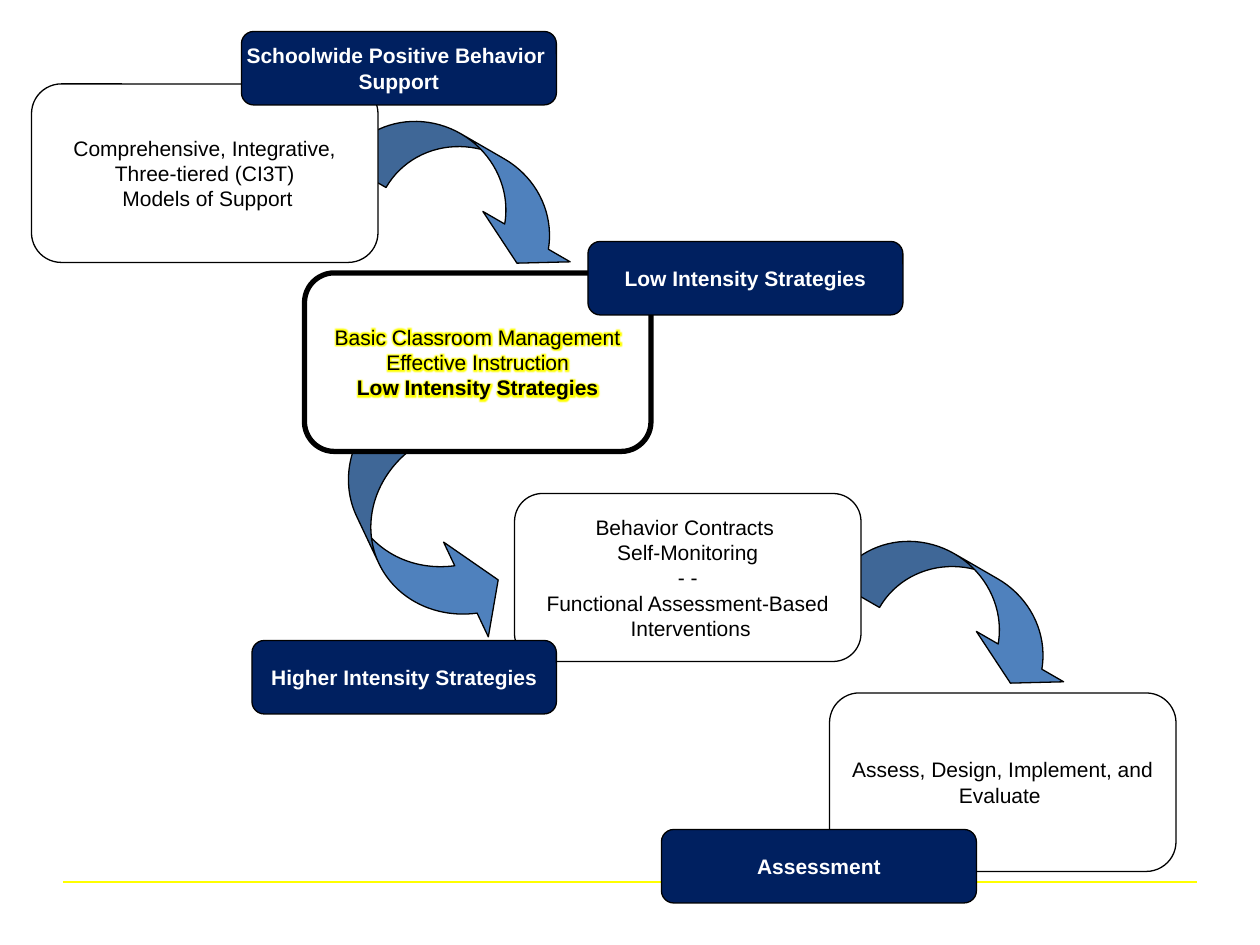
from lxml import etree
from pptx import Presentation
from pptx.dml.color import RGBColor
from pptx.enum.shapes import MSO_CONNECTOR, MSO_SHAPE
from pptx.enum.text import MSO_ANCHOR, PP_ALIGN
from pptx.oxml.ns import qn
from pptx.util import Inches, Pt

ROUND = MSO_SHAPE.ROUNDED_RECTANGLE
DOWN = MSO_SHAPE.CURVED_DOWN_ARROW
UP = MSO_SHAPE.CURVED_UP_ARROW
LINE = MSO_CONNECTOR.STRAIGHT
MIDDLE = MSO_ANCHOR.MIDDLE
CENTER = PP_ALIGN.CENTER

WHITE = RGBColor(255, 255, 255)
BLACK = RGBColor(0, 0, 0)
NAVY = RGBColor(0, 32, 96)
BLUE = RGBColor(79, 129, 189)
YELLOW = RGBColor(255, 255, 0)
THIN, THICK = 0.75, 3

deck = Presentation()
deck.slide_width = Inches(10)
deck.slide_height = Inches(7.5)
COL = deck.slide_width / 120
ROW = deck.slide_height / 90
slide = deck.slides.add_slide(deck.slide_layouts[6])


def add_form(kind, left, top, wide, high, fill, width=THIN):
    form = slide.shapes.add_shape(
        kind, int(left * COL), int(top * ROW), int(wide * COL), int(high * ROW))
    form.shadow.inherit = False
    form.fill.solid()
    form.fill.fore_color.rgb = fill
    form.line.color.rgb = BLACK
    form.line.width = Pt(width)
    return form


def add_box(left, top, wide, high, fill, text, width=THIN):
    box = add_form(ROUND, left, top, wide, high, fill, width)
    frame = box.text_frame
    frame.word_wrap = False
    frame.vertical_anchor = MIDDLE
    frame.text = text
    for para in frame.paragraphs:
        para.alignment = CENTER
        for run in para.runs:
            run.font.size = Pt(12)
            run.font.name = "Arial"
            run.font.bold = fill == NAVY
            run.font.color.rgb = WHITE if fill == NAVY else BLACK
    return box


rule = slide.shapes.add_connector(
    LINE, int(6 * COL), int(84 * ROW), int(114 * COL), int(84 * ROW))
rule.line.color.rgb = YELLOW
rule.line.width = Pt(THIN)
etree.SubElement(rule._element.spPr, qn("a:effectLst"))

arrows = [
    (DOWN, 33, 14, 24, 8, 30, (0.6, 1.2, 0.33)),
    (UP, 27.4, 45.7, 25, 9.6, 64.7, (0.52, 1.04, 0.33)),
    (DOWN, 80, 54, 24, 8, 30, (0.6, 1.2, 0.33)),
]
for kind, left, top, wide, high, turn, bends in arrows:
    arrow = add_form(kind, left, top, wide, high, BLUE)
    arrow.rotation = turn
    for spot, bend in enumerate(bends):
        arrow.adjustments[spot] = bend

panels = [
    (3, 8, 17, THIN,
     "Comprehensive, Integrative,\nThree-tiered (CI3T)\n Models of Support"),
    (79, 66, 17, THIN, "Assess, Design, Implement, and\nEvaluate "),
    (29, 26, 17, THICK,
     "Basic Classroom Management\nEffective Instruction\nLow Intensity Strategies"),
    (49, 47, 16, THIN,
     "Behavior Contracts \nSelf-Monitoring\n- -\n"
     "Functional Assessment-Based\n Interventions"),
]
for left, top, high, width, text in panels:
    panel = add_box(left, top, 33, high, WHITE, text, width)
    if width == THICK:
        focus = panel.text_frame.paragraphs

focus[-1].runs[0].font.bold = True
for para in focus:
    props = para.runs[0].font._element
    effect = etree.Element(qn("a:effectLst"))
    glow = etree.SubElement(effect, qn("a:glow"), rad=str(Pt(5)))
    etree.SubElement(glow, qn("a:srgbClr"), val=str(YELLOW))
    props.find(qn("a:solidFill")).addnext(effect)

labels = [
    (23, 3, 30, "Schoolwide Positive Behavior \nSupport"),
    (56, 23, 30, "Low Intensity Strategies"),
    (24, 61, 29, "Higher Intensity Strategies"),
    (63, 79, 30, "Assessment"),
]
for left, top, wide, text in labels:
    add_box(left, top, wide, 7, NAVY, text)

deck.save("out.pptx")
